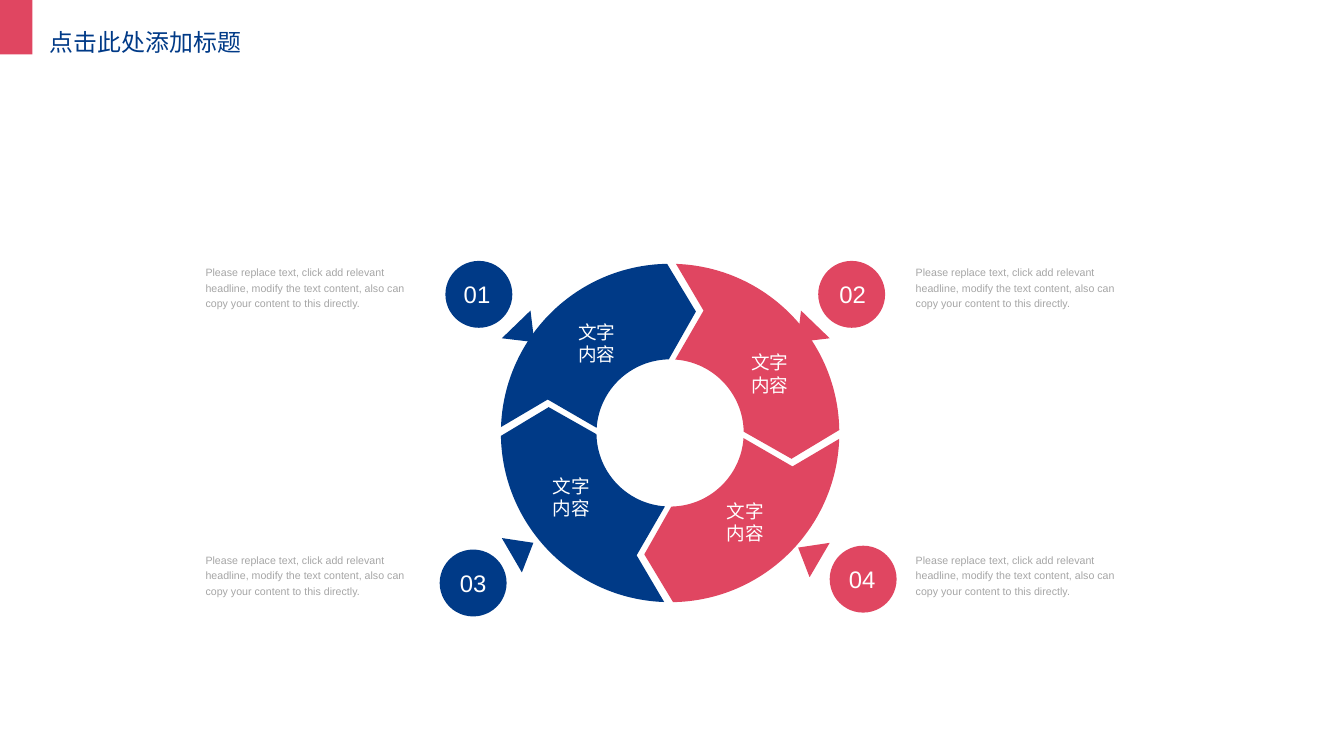
import math
import pptx
import pptx.dml.color
import pptx.enum.shapes
import pptx.enum.text
import pptx.oxml
import pptx.oxml.ns
import pptx.util

RGB = pptx.dml.color.RGBColor
NAVY = RGB(0x00, 0x3A, 0x87)
ROSE = RGB(0xE0, 0x46, 0x61)
GREY = RGB(0xA6, 0xA6, 0xA6)
WHITE = RGB(0xFF, 0xFF, 0xFF)
SHAPE = pptx.enum.shapes.MSO_SHAPE
ALIGN = pptx.enum.text.PP_ALIGN
ANCHOR = pptx.enum.text.MSO_ANCHOR
FIT = pptx.enum.text.MSO_AUTO_SIZE
NS = pptx.oxml.ns.nsdecls("a")
PX = 9144
NOTE = ("Please replace text, click add relevant headline, modify the text "
        "content, also can copy your content to this directly.")
LABEL = "文字内容"

FLUSH = dict(margin_left=0, margin_top=0, margin_right=0, margin_bottom=0,
             word_wrap=True)
MIDDLE = dict(FLUSH, vertical_anchor=ANCHOR.MIDDLE)
GROW = dict(FLUSH, auto_size=FIT.SHAPE_TO_FIT_TEXT)
TOP = dict(vertical_anchor=ANCHOR.TOP, auto_size=FIT.NONE, word_wrap=True)

CORNERS = [
    dict(num="01", tone=NAVY, spot=(466, 273), shift=-1, label=(73, 46),
         tip=[(89, 52), (59, 81), (93, 85)], note=(215, 276, 225, 47)),
    dict(num="02", tone=ROSE, spot=(856, 273), shift=2, label=(254, 78),
         tip=[(-18, 52), (12, 81), (-22, 85)], note=(958, 276, 230, 47)),
    dict(num="04", tone=ROSE, spot=(868, 571), shift=0, label=(228, 233),
         tip=[(-21, 33), (0, -3), (-33, 2)], note=(958, 577, 230, 47)),
    dict(num="03", tone=NAVY, spot=(460, 575), shift=1, label=(46, 207),
         tip=[(65, -12), (86, 24), (98, -7)], note=(215, 577, 225, 47)),
]


def emu(*vals):
    return [round(val * PX) for val in vals]


def style(item, **vals):
    for key, val in vals.items():
        setattr(item, key, val)


def paint(shape, tone):
    shape.shadow.inherit = False
    shape.fill.solid()
    shape.fill.fore_color.rgb = tone
    shape.line.fill.background()


def write(shape, text, size, tone, frame, align, lead=1.0, face="Arial"):
    body = shape.text_frame
    style(body, **frame)
    para = body.paragraphs[0]
    style(para, alignment=align, line_spacing=lead)
    run = para.add_run()
    run.text = text
    style(run.font, size=pptx.util.Pt(size), name=face)
    run.font.color.rgb = tone
    return run


def block(slide, kind, box, tone):
    shape = slide.shapes.add_shape(kind, *emu(*box))
    paint(shape, tone)


def outline(slide, points, tone):
    points = [emu(*point) for point in points]
    pen = slide.shapes.build_freeform(*points[0], scale=1.0)
    pen.add_line_segments(points[1:], close=True)
    shape = pen.convert_to_shape()
    paint(shape, tone)
    return shape


def curve(shape, starts):
    lines = shape._element.xpath(".//a:lnTo")
    for start in starts:
        trio = lines[start:start + 3]
        bend = pptx.oxml.parse_xml(f"<a:cubicBezTo {NS}/>")
        trio[0].addprevious(bend)
        for line in trio:
            bend.append(line[0])
            line.getparent().remove(line)


def header(slide, box):
    left, top, width, height = box
    block(slide, SHAPE.RECTANGLE, (left, top, 34, 57), ROSE)
    title = slide.shapes.title
    place = emu(left + 42, top + 24, 236, 39)
    style(title, **dict(zip(("left", "top", "width", "height"), place)))
    face = "Noto Sans CJK SC"
    run = write(title, "点击此处添加标题", 18, NAVY, TOP, ALIGN.LEFT, face=face)
    east = pptx.oxml.parse_xml(f'<a:ea {NS} typeface="{face}"/>')
    run.font._element.append(east)


def badge(slide, box, part):
    left, top, width, height = box
    block(slide, SHAPE.OVAL, box, part["tone"])
    outline(slide, [(left + x, top + y) for x, y in part["tip"]], part["tone"])
    area = slide.shapes.add_textbox(*emu(left + part["shift"], top + 8, 68, 53))
    write(area, part["num"], 18, WHITE, MIDDLE, ALIGN.CENTER)


def note(slide, box):
    area = slide.shapes.add_textbox(*emu(*box))
    write(area, NOTE, 8, GREY, GROW, ALIGN.LEFT, lead=1.2)


def arc(radius, start, stop):
    pull = 4 / 3 * math.tan(math.radians(stop - start) / 4)
    (ax, ay), (bx, by) = [
        (radius * math.cos(math.radians(a)), radius * math.sin(math.radians(a)))
        for a in (start, stop)]
    return [(ax, ay), (ax - pull * ay, ay + pull * ax),
            (bx + pull * by, by - pull * bx), (bx, by)]


def ring(slide, box):
    left, top, width, height = box
    midx, midy = left + width / 2, top + height / 2
    wedge = ([(27, -127)] + arc(width / 2, -91, -178)
             + [(-128, -35)] + arc(77, -176, -91))
    for part in CORNERS:
        points = [(midx + x, midy + y) for x, y in wedge]
        curve(outline(slide, points, part["tone"]), (1, 6))
        wedge = [(-y, x) for x, y in wedge]
    for part in CORNERS:
        x, y = part["label"]
        area = slide.shapes.add_textbox(*emu(left + x, top + y, 55, 74))
        write(area, LABEL, 14, WHITE, MIDDLE, ALIGN.CENTER)


def main():
    deck = pptx.Presentation()
    deck.slide_width, deck.slide_height = emu(1406, 791)
    slide = deck.slides.add_slide(deck.slide_layouts[5])
    header(slide, (0, 0, 1406, 63))
    for part in CORNERS:
        badge(slide, (*part["spot"], 70, 70), part)
        note(slide, part["note"])
    ring(slide, (524, 276, 354, 354))
    deck.save("out.pptx")


if __name__ == "__main__":
    main()
